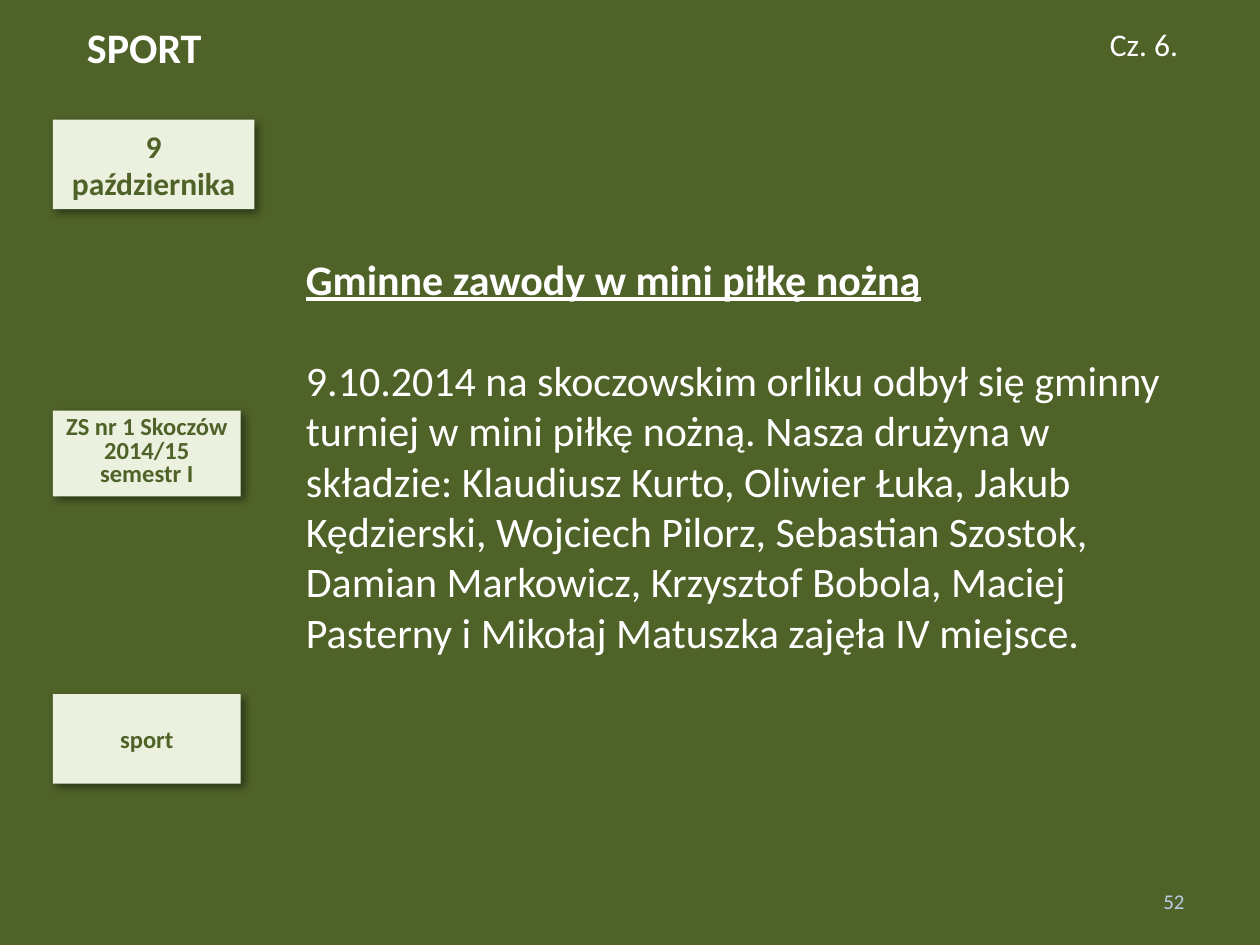
"""Build the sport news slide about the local mini football tournament."""
from lxml.etree import SubElement
from pptx import Presentation
from pptx.dml.color import RGBColor
from pptx.enum.shapes import MSO_SHAPE
from pptx.enum.text import MSO_ANCHOR, MSO_AUTO_SIZE, PP_ALIGN
from pptx.oxml.ns import qn
from pptx.util import Pt

GREEN = RGBColor(0x4F, 0x62, 0x28)
PALE_GREEN = RGBColor(0xEB, 0xF1, 0xDE)
WHITE = RGBColor(0xFF, 0xFF, 0xFF)
PALE_BLUE = RGBColor(0xB9, 0xCD, 0xE5)

TITLE = "SPORT"
PART = "Cz. 6."
PAGE = "52"
HEADING = "Gminne zawody w mini piłkę nożną"
STORY = (
    "9.10.2014 na skoczowskim orliku odbył się gminny turniej w mini piłkę nożną. "
    "Nasza drużyna w składzie: Klaudiusz Kurto, Oliwier Łuka, Jakub Kędzierski, "
    "Wojciech Pilorz, Sebastian Szostok, Damian Markowicz, Krzysztof Bobola, "
    "Maciej Pasterny i Mikołaj Matuszka zajęła IV miejsce."
)
LABEL_LEFT = 30.24
LABELS = [
    (["9", "października"], (68.4, 115.2, 51.12), {"size": 18, "anchor": MSO_ANCHOR.MIDDLE}),
    (["ZS nr 1 Skoczów 2014/15", "semestr I"], (234.72, 107.28, 48.96), {"size": 14, "spacing": 0.8}),
    (["sport"], (396.72, 107.28, 51.12), {"size": 14, "anchor": MSO_ANCHOR.MIDDLE}),
]


def write_text(shape, lines, size, color=WHITE, bold=False, align=PP_ALIGN.LEFT,
               anchor=MSO_ANCHOR.TOP, wrap=True, spacing=None):
    frame = shape.text_frame
    frame.word_wrap = wrap
    frame.auto_size = MSO_AUTO_SIZE.NONE
    frame.vertical_anchor = anchor
    frame.text = "\n".join(lines)
    for paragraph in frame.paragraphs:
        paragraph.alignment = align
        if spacing:
            paragraph.line_spacing = spacing
        for run in paragraph.runs:
            run.font.name = "Calibri"
            run.font.size = Pt(size)
            run.font.bold = bold
            run.font.color.rgb = color
    return frame.paragraphs


def add_shadow(shape):
    shape.shadow.inherit = False
    effects = shape._element.spPr.find(qn("a:effectLst"))
    shadow = SubElement(effects, qn("a:outerShdw"), blurRad=str(Pt(5)), dist=str(Pt(3)),
                        dir="2700000", algn="tl", rotWithShape="0")
    color = SubElement(shadow, qn("a:srgbClr"), val="000000")
    SubElement(color, qn("a:alpha"), val="43000")


def add_label(slide, lines, place, text_format):
    top, width, height = place
    label = slide.shapes.add_shape(MSO_SHAPE.RECTANGLE, Pt(LABEL_LEFT), Pt(top), Pt(width), Pt(height))
    label.fill.solid()
    label.fill.fore_color.rgb = PALE_GREEN
    label.line.fill.background()
    add_shadow(label)
    write_text(label, lines, color=GREEN, bold=True, align=PP_ALIGN.CENTER, **text_format)


def add_text(slide, lines, place, **text_format):
    box = slide.shapes.add_textbox(*map(Pt, place))
    return write_text(box, lines, **text_format)


def main():
    presentation = Presentation()
    presentation.slide_width, presentation.slide_height = Pt(720), Pt(540)
    slide = presentation.slides.add_slide(presentation.slide_layouts[5])
    slide.background.fill.solid()
    slide.background.fill.fore_color.rgb = GREEN

    title = slide.shapes.title
    title.left, title.top, title.width, title.height = map(Pt, (42.48, 8.64, 286.56, 36))
    write_text(title, [TITLE], size=24, bold=True)

    for lines, place, text_format in LABELS:
        add_label(slide, lines, place, text_format)

    add_text(slide, [PART], (627.12, 10.8, 54, 28.8), size=18, wrap=False)
    add_text(slide, [PAGE], (516.24, 500.4, 167.76, 28.8), size=12, color=PALE_BLUE,
             align=PP_ALIGN.RIGHT, anchor=MSO_ANCHOR.MIDDLE)
    heading, story = add_text(slide, [HEADING, STORY], (167.76, 141.12, 516.24, 239.76), size=24)
    heading.runs[0].font.bold = True
    heading.runs[0].font.underline = True
    story.space_before = Pt(29)

    presentation.save("out.pptx")


if __name__ == "__main__":
    main()
